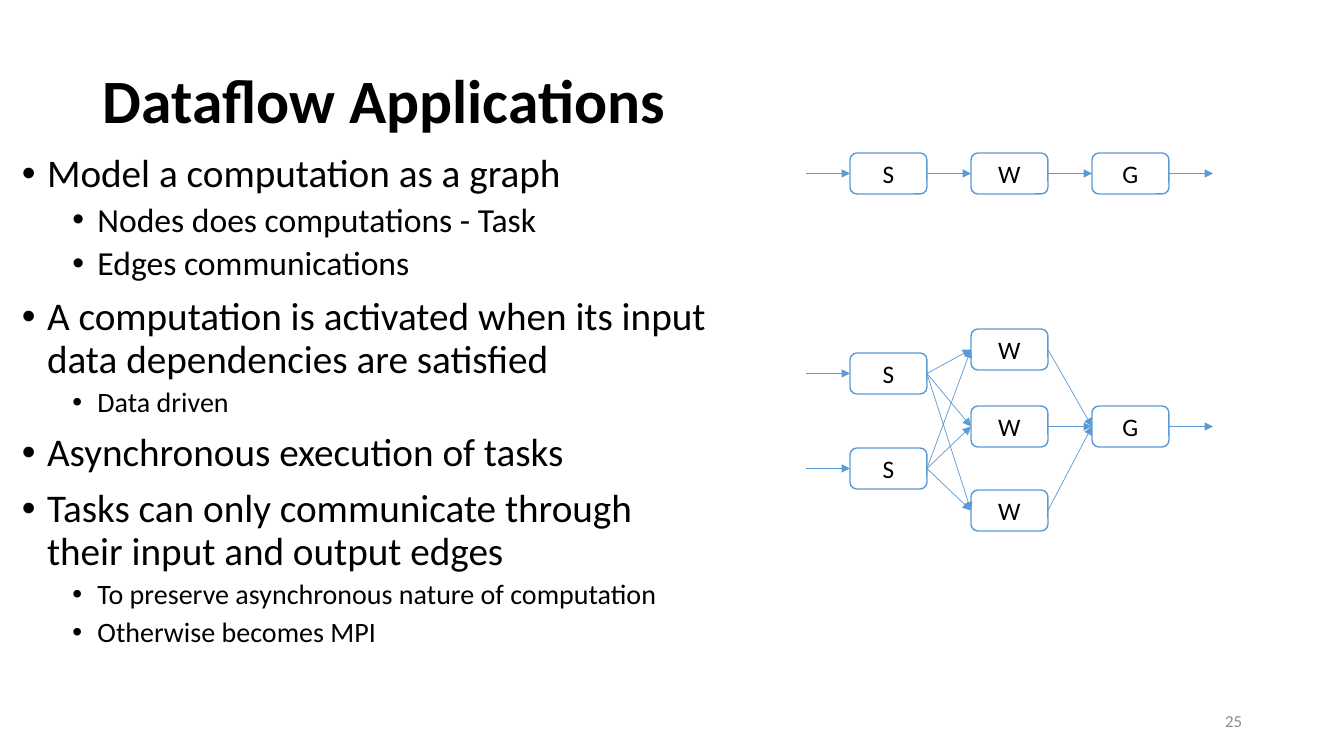
from itertools import pairwise, product

from lxml.etree import SubElement
from pptx import Presentation
from pptx.dml.color import RGBColor
from pptx.enum.shapes import MSO_CONNECTOR, MSO_SHAPE
from pptx.enum.text import MSO_ANCHOR, PP_ALIGN
from pptx.oxml.ns import qn
from pptx.util import Pt

COLORS = {"text": "000000", "node": "FFFFFF", "line": "5B9BD5", "number": "8C8C8C"}
FONT = "Calibri"
NODE_WIDTH, NODE_HEIGHT = 77, 41
ARROW_LENGTH = 44
STAGE_STEP = NODE_WIDTH + ARROW_LENGTH
LEFT_SIDE, RIGHT_SIDE = 1, 3

# Level, size in points, text
POINTS = [
    (0, 28, "Model a computation as a graph"),
    (1, 24, "Nodes does computations - Task"),
    (1, 24, "Edges communications"),
    (0, 28, "A computation is activated when its input data dependencies are satisfied"),
    (1, 20, "Data driven"),
    (0, 28, "Asynchronous execution of tasks"),
    (0, 28, "Tasks can only communicate through their input and output edges"),
    (1, 20, "To preserve asynchronous nature of computation"),
    (1, 20, "Otherwise becomes MPI"),
]

# Each stage: node label and the tops of its nodes within the graph
CHAIN = [("S", [0]), ("W", [0]), ("G", [0])]
PARALLEL = [("S", [24, 119]), ("W", [0, 77, 161]), ("G", [77])]


def px(length):
    return round(length * 914400 / 100.8)


def color(name):
    return RGBColor.from_string(COLORS[name])


def style(paragraph, size, color_name="text", bold=False):
    paragraph.font.name = FONT
    paragraph.font.size = Pt(size)
    paragraph.font.bold = bold
    paragraph.font.color.rgb = color(color_name)


def add_frame(slide, box, anchor):
    frame = slide.shapes.add_textbox(*map(px, box)).text_frame
    frame.word_wrap = True
    frame.vertical_anchor = anchor
    return frame


def add_title(slide, box):
    paragraph = add_frame(slide, box, MSO_ANCHOR.MIDDLE).paragraphs[0]
    paragraph.text = "Dataflow Applications"
    paragraph.line_spacing = 0.9
    style(paragraph, 44, bold=True)


def add_points(slide, box):
    frame = add_frame(slide, box, MSO_ANCHOR.TOP)
    for index, (level, size, text) in enumerate(POINTS):
        paragraph = frame.add_paragraph() if index else frame.paragraphs[0]
        paragraph.text = text
        paragraph.level = level
        paragraph.line_spacing = 0.9
        paragraph.space_before = Pt((5 if level else 10) if index else 0)
        # Hanging bullet
        properties = paragraph._p.get_or_add_pPr()
        properties.set("marL", str(Pt(18 + 36 * level)))
        properties.set("indent", str(-Pt(18)))
        SubElement(properties, qn("a:buFont"), typeface="Arial")
        SubElement(properties, qn("a:buChar"), char="•")
        style(paragraph, size)


def add_node(group, label, left, top):
    node = group.shapes.add_shape(
        MSO_SHAPE.ROUNDED_RECTANGLE, px(left), px(top), px(NODE_WIDTH), px(NODE_HEIGHT))
    node.shadow.inherit = False
    node.fill.solid()
    node.fill.fore_color.rgb = color("node")
    node.line.color.rgb = color("line")
    node.line.width = Pt(1)
    node.text_frame.vertical_anchor = MSO_ANCHOR.MIDDLE
    paragraph = node.text_frame.paragraphs[0]
    paragraph.text = label
    paragraph.alignment = PP_ALIGN.CENTER
    style(paragraph, 18)
    return node


def add_arrow(group, source=None, target=None):
    """Join two nodes, or run into or out of a single one."""
    if source:
        start_x, start_y = source.left + source.width, source.top + source.height // 2
    else:
        start_x, start_y = target.left - px(ARROW_LENGTH), target.top + target.height // 2
    if target:
        end_x, end_y = target.left, target.top + target.height // 2
    else:
        end_x, end_y = start_x + px(ARROW_LENGTH), start_y
    arrow = group.shapes.add_connector(
        MSO_CONNECTOR.STRAIGHT, start_x, start_y, end_x, end_y)
    if source:
        arrow.begin_connect(source, RIGHT_SIDE)
    if target:
        arrow.end_connect(target, LEFT_SIDE)
    arrow.line.color.rgb = color("line")
    arrow.line.width = Pt(0.5)
    SubElement(arrow.line._get_or_add_ln(), qn("a:tailEnd"), type="triangle")
    SubElement(arrow._element.spPr, qn("a:effectLst"))


def add_graph(slide, left, top, stages):
    group = slide.shapes.add_group_shape()
    columns = [
        [add_node(group, label, left + ARROW_LENGTH + STAGE_STEP * index, top + offset)
         for offset in offsets]
        for index, (label, offsets) in enumerate(stages)
    ]
    # Every node feeds every node of the next stage
    for sources, targets in pairwise(columns):
        for source, target in product(sources, targets):
            add_arrow(group, source, target)
    # Input and output arrows
    for node in columns[0]:
        add_arrow(group, target=node)
    for node in columns[-1]:
        add_arrow(group, source=node)


def add_slide_number(slide, box):
    paragraph = add_frame(slide, box, MSO_ANCHOR.MIDDLE).paragraphs[0]
    paragraph.text = "25"
    paragraph.alignment = PP_ALIGN.RIGHT
    style(paragraph, 12, "number")


def main():
    presentation = Presentation()
    presentation.slide_width, presentation.slide_height = px(1344), px(756)
    slide = presentation.slides.add_slide(presentation.slide_layouts[6])
    add_title(slide, (93, 31, 1159, 146))
    add_points(slide, (12, 149, 714, 521))
    add_graph(slide, 806, 153, CHAIN)
    add_graph(slide, 806, 329, PARALLEL)
    add_slide_number(slide, (950, 701, 302, 40))
    presentation.save("out.pptx")


if __name__ == "__main__":
    main()
